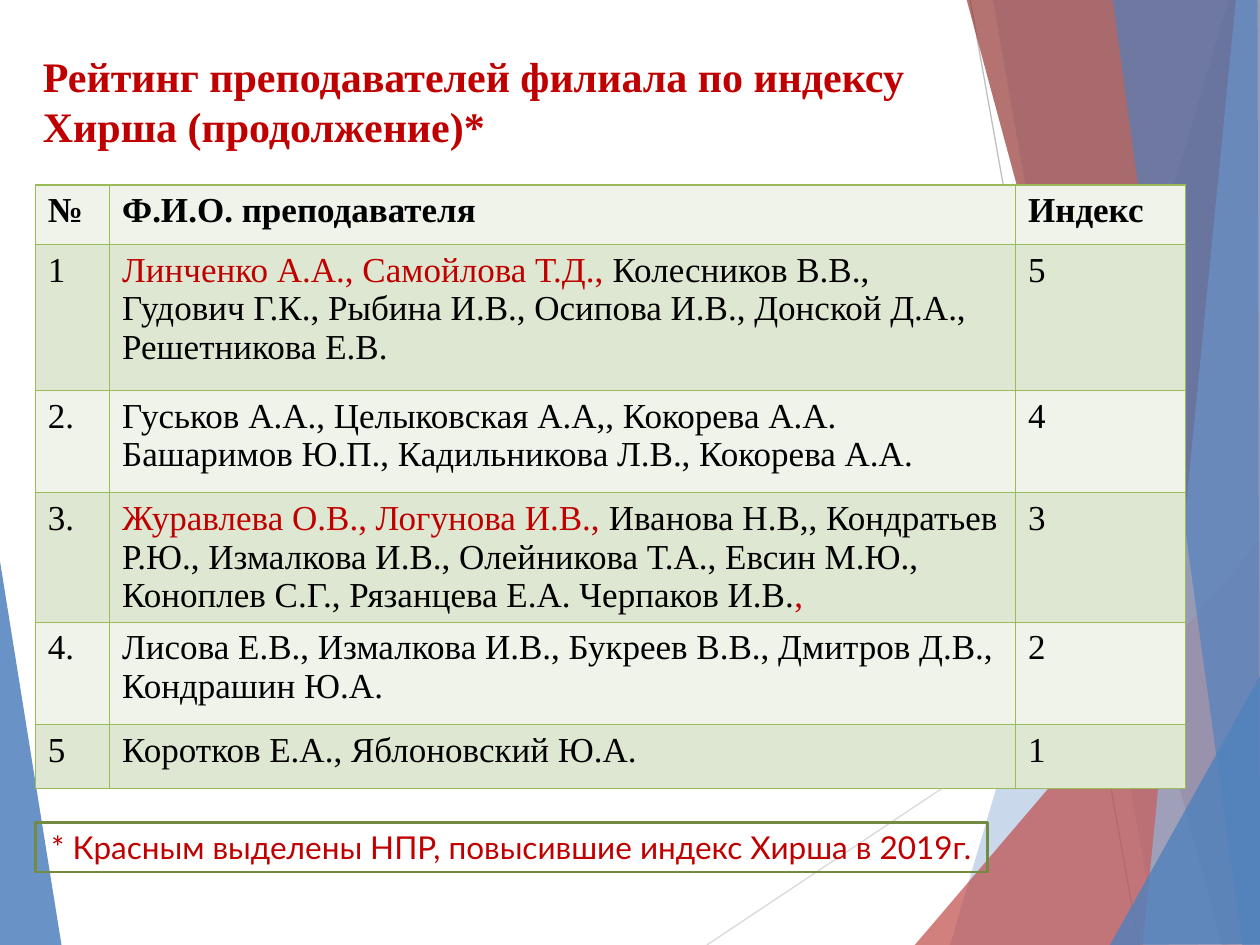
from lxml.etree import SubElement
from pptx import Presentation
from pptx.dml.color import RGBColor
from pptx.enum.shapes import MSO_CONNECTOR, MSO_SHAPE
from pptx.enum.text import MSO_ANCHOR, PP_ALIGN
from pptx.oxml import parse_xml
from pptx.oxml.ns import nsdecls, qn
from pptx.util import Inches, Pt

COLORS = {
    "red": "C00000", "black": "000000", "blue": "4F81BD", "light blue": "95B3D7",
    "brick": "C0504D", "dark brick": "953735", "gray": "BFBFBF", "light gray": "D9D9D9",
    "pale green": "EFF3EA", "soft green": "DEE7D1", "border": "9BBB59", "frame": "738A42",
}
SERIF = "Times New Roman"

# Background facets: colour, opacity in percent, corners in inches
FACETS = [
    ("blue", 85, [(-0.01, 4.39), (0.49, 7.51), (-0.01, 7.5)]),
    ("blue", 30, [(9.75, 0), (7.54, 7.5), (10.02, 7.51), (10.01, 0.01)]),
    ("blue", 20, [(7.88, -0.01), (9.19, 7.5), (10.01, 7.5), (10.01, -0.01)]),
    ("brick", 72, [(7.26, 7.5), (10, 4.29), (10.01, 7.5)]),
    ("dark brick", 70, [(7.67, -0.01), (9.7, 7.5), (10.01, 7.49), (10.01, -0.01)]),
    ("light blue", 70, [(9.81, -0.01), (9.07, 7.5), (10.01, 7.5), (10, -0.01)]),
    ("blue", 65, [(8.83, -0.01), (9.86, 7.5), (10, 7.5), (9.98, -0.01)]),
    ("blue", 80, [(8.81, 7.5), (10.01, 5.35), (10.01, 7.49)]),
]
RAYS = [("light gray", (5.61, 7.5), (10.01, 4.57)), ("gray", (7.7, 0), (9.04, 7.5))]

# Each name cell is a list of paragraphs, each paragraph a list of (text, colour)
RATING = [
    ("1", [[("Линченко А.А., Самойлова Т.Д., ", "red"), ("Колесников В.В.,", "black")],
           [("Гудович Г.К., Рыбина И.В., Осипова И.В., Донской Д.А., Решетникова Е.В.", "black")]], "5"),
    ("2.", [[("Гуськов А.А., Целыковская А.А,, Кокорева А.А. "
              "Башаримов Ю.П., Кадильникова Л.В., Кокорева А.А.", "black")]], "4"),
    ("3.", [[("Журавлева О.В., Логунова И.В., ", "red"),
             ("Иванова Н.В,, Кондратьев Р.Ю., Измалкова И.В., Олейникова Т.А., Евсин М.Ю.,", "black")],
            [("Коноплев С.Г., Рязанцева Е.А. Черпаков И.В.", "black"), (",", "red")]], "3"),
    ("4.", [[("Лисова Е.В., Измалкова И.В., Букреев В.В., Дмитров Д.В., Кондрашин Ю.А.", "black")]], "2"),
    ("5", [[("Коротков Е.А., Яблоновский Ю.А.", "black")]], "1"),
]
HEADER = ("№", [[("Ф.И.О. преподавателя", "black")]], "Индекс")
COLUMN_WIDTHS = [0.59, 7.19, 1.35]
ROW_HEIGHTS = [0.47, 1.16, 0.81, 1.03, 0.81, 0.51]


def rgb(name):
    return RGBColor.from_string(COLORS[name])


def format_font(font, name, size, bold=False, color=None):
    font.name, font.size, font.bold = name, Pt(size), bold
    if color:
        font.color.rgb = rgb(color)


def add_facet(slide, color, opacity, corners):
    points = [(Inches(x), Inches(y)) for x, y in corners]
    builder = slide.shapes.build_freeform(*points[0])
    builder.add_line_segments(points[1:], close=True)
    shape = builder.convert_to_shape()
    shape.shadow.inherit = False
    shape.line.fill.background()
    shape.fill.solid()
    shape.fill.fore_color.rgb = rgb(color)
    color_element = shape._element.spPr.find(qn("a:solidFill"))[0]
    SubElement(color_element, qn("a:alpha")).set("val", str(opacity * 1000))


def add_ray(slide, color, start, end):
    ends = [Inches(value) for value in start + end]
    connector = slide.shapes.add_connector(MSO_CONNECTOR.STRAIGHT, *ends)
    connector.line.color.rgb = rgb(color)
    connector.line.width = Pt(0.75)
    SubElement(connector._element.spPr, qn("a:effectLst"))


def set_title(slide, text):
    title = slide.shapes.title
    slide.shapes._spTree.append(title._element)  # bring in front of the facets
    title.left, title.top = Inches(0.24), Inches(0.29)
    title.width, title.height = Inches(7.44), Inches(1.02)
    title.text_frame.text = text
    title.text_frame.word_wrap = True
    title.text_frame.vertical_anchor = MSO_ANCHOR.MIDDLE
    paragraph = title.text_frame.paragraphs[0]
    paragraph.alignment = PP_ALIGN.LEFT
    format_font(paragraph.font, SERIF, 24, True, "red")


def set_borders(cell):
    properties = cell._tc.get_or_add_tcPr()
    for index, side in enumerate("LRTB"):
        properties.insert(index, parse_xml(
            f'<a:ln{side} {nsdecls("a")} w="12700"><a:solidFill>'
            f'<a:srgbClr val="{COLORS["border"]}"/></a:solidFill></a:ln{side}>'))


def fill_cell(cell, paragraphs, background, bold):
    cell.fill.solid()
    cell.fill.fore_color.rgb = rgb(background)
    set_borders(cell)
    for index, runs in enumerate(paragraphs):
        frame = cell.text_frame
        paragraph = frame.add_paragraph() if index else frame.paragraphs[0]
        format_font(paragraph.font, SERIF, 20, bold)
        for text, color in runs:
            run = paragraph.add_run()
            run.text = text
            run.font.color.rgb = rgb(color)


def add_rating_table(slide):
    table = slide.shapes.add_table(
        len(ROW_HEIGHTS), len(COLUMN_WIDTHS), Inches(0.28), Inches(1.47),
        Inches(sum(COLUMN_WIDTHS)), Inches(sum(ROW_HEIGHTS))).table
    for column, width in zip(table.columns, COLUMN_WIDTHS):
        column.width = Inches(width)
    for index, (number, names, score) in enumerate([HEADER] + RATING):
        table.rows[index].height = Inches(ROW_HEIGHTS[index])
        background = "soft green" if index % 2 else "pale green"
        contents = [[[(number, "black")]], names, [[(score, "black")]]]
        for cell, paragraphs in zip(table.rows[index].cells, contents):
            fill_cell(cell, paragraphs, background, index == 0)


def add_footnote(slide, text):
    shape = slide.shapes.add_shape(
        MSO_SHAPE.RECTANGLE, Inches(0.28), Inches(6.53), Inches(7.56), Inches(0.39))
    shape.shadow.inherit = False
    shape.fill.background()
    shape.line.color.rgb = rgb("frame")
    shape.line.width = Pt(1.5)
    shape.text_frame.text = text
    shape.text_frame.word_wrap = False
    shape.text_frame.vertical_anchor = MSO_ANCHOR.MIDDLE
    paragraph = shape.text_frame.paragraphs[0]
    paragraph.alignment = PP_ALIGN.CENTER
    format_font(paragraph.font, "Lato", 18, color="red")


def main():
    presentation = Presentation()
    presentation.slide_width, presentation.slide_height = Inches(10), Inches(7.5)
    slide = presentation.slides.add_slide(presentation.slide_layouts[5])

    # Background: one facet on the left, two rays, the rest on the right
    add_facet(slide, *FACETS[0])
    for ray in RAYS:
        add_ray(slide, *ray)
    for facet in FACETS[1:]:
        add_facet(slide, *facet)

    # Content
    set_title(slide, "Рейтинг преподавателей филиала по индексу Хирша (продолжение)*")
    add_rating_table(slide)
    add_footnote(slide, "* Красным выделены НПР, повысившие индекс Хирша в 2019г.")

    presentation.save("out.pptx")


if __name__ == "__main__":
    main()
